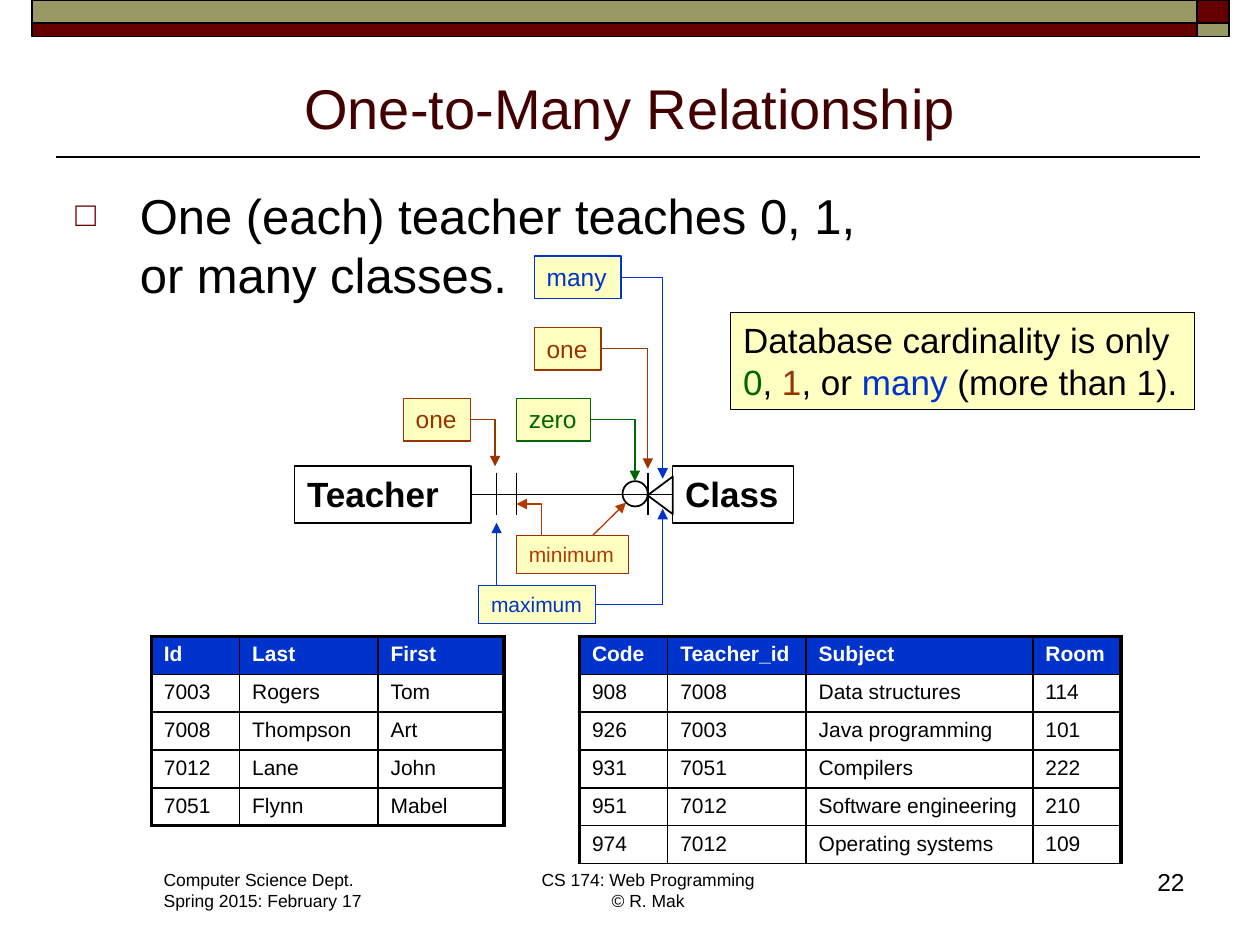
"""Builds the slide on one-to-many relationships with its diagram and two tables."""
from dataclasses import dataclass

from lxml.etree import SubElement
from pptx import Presentation
from pptx.dml.color import RGBColor as Rgb
from pptx.enum.shapes import MSO_CONNECTOR as Link, MSO_SHAPE as Shape
from pptx.enum.text import MSO_ANCHOR as Anchor, MSO_AUTO_SIZE as Fit, PP_ALIGN as Align
from pptx.oxml.ns import qn
from pptx.util import Cm, Pt


@dataclass(frozen=True)
class Theme:
    font: str = "Arial"
    black: str = "000000"
    white: str = "FFFFFF"
    maroon: str = "660000"
    olive: str = "999966"
    wine: str = "420000"
    cream: str = "FFFFC2"
    blue: str = "0033CC"
    green: str = "006600"
    brown: str = "993300"
    rust: str = "B23C00"
    rust_edge: str = "A12A03"
    title: int = 32
    body: int = 28
    heading: int = 20
    label: int = 14
    small: int = 12
    footer: int = 10
    thin: float = 0.75
    line: float = 1
    frame: float = 2.25


theme = Theme()


def write(frame, paragraphs, size, bold=False, align=Align.LEFT, anchor=Anchor.TOP, wrap=False):
    frame.word_wrap = wrap
    frame.vertical_anchor = anchor
    for index, parts in enumerate(paragraphs):
        para = frame.paragraphs[0] if index == 0 else frame.add_paragraph()
        para.alignment = align
        for text, color in parts:
            for position, piece in enumerate(text.split("\n")):
                if position:
                    para.add_line_break()
                span = para.add_run()
                span.text = piece
                style = {"name": theme.font, "size": Pt(size), "bold": bold}
                for name, value in style.items():
                    setattr(span.font, name, value)
                span.font.color.rgb = Rgb.from_string(color)


def connect(kind, start, end, color=theme.black, width=theme.line, arrow=None):
    link = page.shapes.add_connector(kind, *(Cm(value) for value in start + end))
    link.line.color.rgb = Rgb.from_string(color)
    link.line.width = Pt(width)
    properties = link._element.spPr
    if kind == Link.ELBOW:
        properties.find(qn("a:prstGeom")).set("prst", "bentConnector2")
    if arrow:
        SubElement(properties.find(qn("a:ln")), qn(f"a:{arrow}"), type="triangle")
    SubElement(properties, qn("a:effectLst"))
    return link


deck = Presentation()
deck.slide_width, deck.slide_height = Cm(25.4), Cm(19.05)
page = deck.slides.add_slide(deck.slide_layouts[6])

connect(Link.STRAIGHT, (24.2, 3.17), (1.12, 3.17))

outlines = [
    (Shape.RECTANGLE, 24.13, 0, 0.64, 0.46, theme.maroon),
    (Shape.RECTANGLE, 0.64, 0, 23.49, 0.46, theme.olive),
    (Shape.RECTANGLE, 0.64, 0.46, 23.49, 0.28, theme.maroon),
    (Shape.RECTANGLE, 24.13, 0.46, 0.64, 0.28, theme.olive),
    (Shape.RECTANGLE, 5.94, 9.4, 3.56, 1.14, None),
    (Shape.RECTANGLE, 13.56, 9.4, 2.44, 1.14, None),
    (Shape.ISOSCELES_TRIANGLE, 12.93, 9.73, 0.76, 0.51, None),
    (Shape.OVAL, 12.55, 9.7, 0.51, 0.51, None),
]
drawn = []
for kind, left, top, width, height, color in outlines:
    shape = page.shapes.add_shape(kind, Cm(left), Cm(top), Cm(width), Cm(height))
    shape.shadow.inherit = False
    shape.line.color.rgb = Rgb.from_string(theme.black)
    shape.line.width = Pt(theme.line)
    if color:
        shape.fill.solid()
        shape.fill.fore_color.rgb = Rgb.from_string(color)
    else:
        shape.fill.background()
    drawn.append(shape)

teacher, class_box, crow_foot, _ = drawn[4:]
crow_foot.rotation = 270
for box, name in ((teacher, "Teacher"), (class_box, "Class")):
    write(box.text_frame, [[(name, theme.black)]], theme.heading, bold=True)

relation = connect(Link.STRAIGHT, (9.5, 9.97), (13.56, 9.97))
relation.begin_connect(teacher, 3)
relation.end_connect(class_box, 1)
for x in (10.01, 10.41, 13.06):
    connect(Link.STRAIGHT, (x, 9.53), (x, 10.39))

texts = [
    ("Computer Science Dept.\nSpring 2015: February 17", 3.05, 17.4, 4.55, 1.12,
     theme.black, theme.footer, Align.LEFT, Anchor.TOP, False),
    ("CS 174: Web Programming\n© R. Mak", 10.64, 17.4, 4.85, 1.12,
     theme.black, theme.footer, Align.CENTER, Anchor.TOP, False),
    ("22", 18.85, 17.35, 5.28, 1.27, theme.black, theme.label, Align.RIGHT, Anchor.TOP, True),
    ("One-to-Many Relationship", 1.27, 1.14, 22.86, 1.83,
     theme.wine, theme.title, Align.CENTER, Anchor.BOTTOM, True),
    ("One (each) teacher teaches 0, 1, \nor many classes.", 1.27, 3.61, 22.61, 4.65,
     theme.black, theme.body, Align.LEFT, Anchor.TOP, True),
]
for text, left, top, width, height, color, size, align, anchor, wrap in texts:
    box = page.shapes.add_textbox(Cm(left), Cm(top), Cm(width), Cm(height))
    write(box.text_frame, [[(text, color)]], size, align=align, anchor=anchor, wrap=wrap)

bullet = box.text_frame.paragraphs[0]._p.get_or_add_pPr()
bullet.set("marL", str(Cm(1.3)))
bullet.set("indent", str(-Cm(1.3)))
SubElement(SubElement(bullet, qn("a:buClr")), qn("a:srgbClr"), val=theme.maroon)
SubElement(bullet, qn("a:buSzPct"), val="70000")
SubElement(bullet, qn("a:buFont"), typeface=theme.font)
SubElement(bullet, qn("a:buChar"), char="□")

cardinality = [
    [("Database cardinality is only", theme.black)],
    [("0", theme.green), (",", theme.black), (" 1", theme.brown), (", or ", theme.black),
     ("many ", theme.blue), ("(more than 1).", theme.black)],
]
labels = [
    ([[("one", theme.brown)]], theme.brown, theme.label, 8.13, 8.03, 1.35, 0.86, (9.98, 9.4)),
    ([[("zero", theme.green)]], theme.green, theme.label, 10.41, 8.03, 1.5, 0.86, (12.8, 9.7)),
    ([[("one", theme.brown)]], theme.brown, theme.label, 10.77, 6.6, 1.35, 0.86, (13.06, 9.45)),
    ([[("many", theme.blue)]], theme.blue, theme.label, 10.77, 5.16, 1.75, 0.86, (13.36, 9.65)),
    ([[("minimum", theme.rust)]], theme.rust_edge, theme.small, 10.41, 10.8, 2.26, 0.76, None),
    ([[("maximum", theme.blue)]], theme.blue, theme.small, 9.65, 11.81, 2.36, 0.76, (13.36, 10.26)),
    (cardinality, theme.black, theme.heading, 14.73, 6.3, 9.35, 1.96, None),
]
for paragraphs, color, size, left, top, width, height, target in labels:
    box = page.shapes.add_textbox(Cm(left), Cm(top), Cm(width), Cm(height))
    box.fill.solid()
    box.fill.fore_color.rgb = Rgb.from_string(theme.cream)
    box.line.color.rgb = Rgb.from_string(color)
    box.line.width = Pt(theme.thin)
    write(box.text_frame, paragraphs, size)
    box.text_frame.auto_size = Fit.SHAPE_TO_FIT_TEXT
    if target:
        start = (left + width, top + height / 2)
        connect(Link.ELBOW, start, target, color, theme.thin, "tailEnd")

connect(Link.ELBOW, (10.41, 10.16), (10.92, 10.8), theme.rust, theme.thin, "headEnd")
connect(Link.STRAIGHT, (11.94, 10.8), (12.62, 10.13), theme.rust, theme.thin, "tailEnd")
connect(Link.STRAIGHT, (10.01, 11.81), (10.01, 10.54), theme.blue, theme.thin, "tailEnd")

tables = [
    (3.05, (1.78, 2.79, 2.54), theme.frame, [
        ("Id", "Last", "First"),
        ("7003", "Rogers", "Tom"),
        ("7008", "Thompson", "Art"),
        ("7012", "Lane", "John"),
        ("7051", "Flynn", "Mabel"),
    ]),
    (11.68, (1.78, 2.79, 4.57, 1.78), theme.line, [
        ("Code", "Teacher_id", "Subject", "Room"),
        ("908", "7008", "Data structures", "114"),
        ("926", "7003", "Java programming", "101"),
        ("931", "7051", "Compilers", "222"),
        ("951", "7012", "Software engineering", "210"),
        ("974", "7012", "Operating systems", "109"),
    ]),
]
for left, widths, bottom_edge, records in tables:
    table = page.shapes.add_table(len(records), len(widths), Cm(left), Cm(12.83),
                                  Cm(sum(widths)), Cm(0.69 * len(records))).table
    table.first_row = table.horz_banding = False
    for column, width in zip(table.columns, widths):
        column.width = Cm(width)
    for row, record in enumerate(records):
        table.rows[row].height = Cm(0.69)
        for col, value in enumerate(record):
            cell = table.cell(row, col)
            write(cell.text_frame, [[(value, theme.black if row else theme.white)]],
                  theme.small, bold=row == 0, wrap=True)
            edges = {
                "a:lnL": theme.line if col else theme.frame,
                "a:lnR": theme.frame if col == len(widths) - 1 else theme.line,
                "a:lnT": theme.line if row else theme.frame,
                "a:lnB": bottom_edge if row == len(records) - 1 else theme.line,
            }
            for tag, weight in edges.items():
                edge = SubElement(cell._tc.get_or_add_tcPr(), qn(tag), w=str(Pt(weight)))
                SubElement(SubElement(edge, qn("a:solidFill")), qn("a:srgbClr"), val=theme.black)
            if row:
                cell.fill.background()
            else:
                cell.fill.solid()
                cell.fill.fore_color.rgb = Rgb.from_string(theme.blue)

deck.save("out.pptx")
